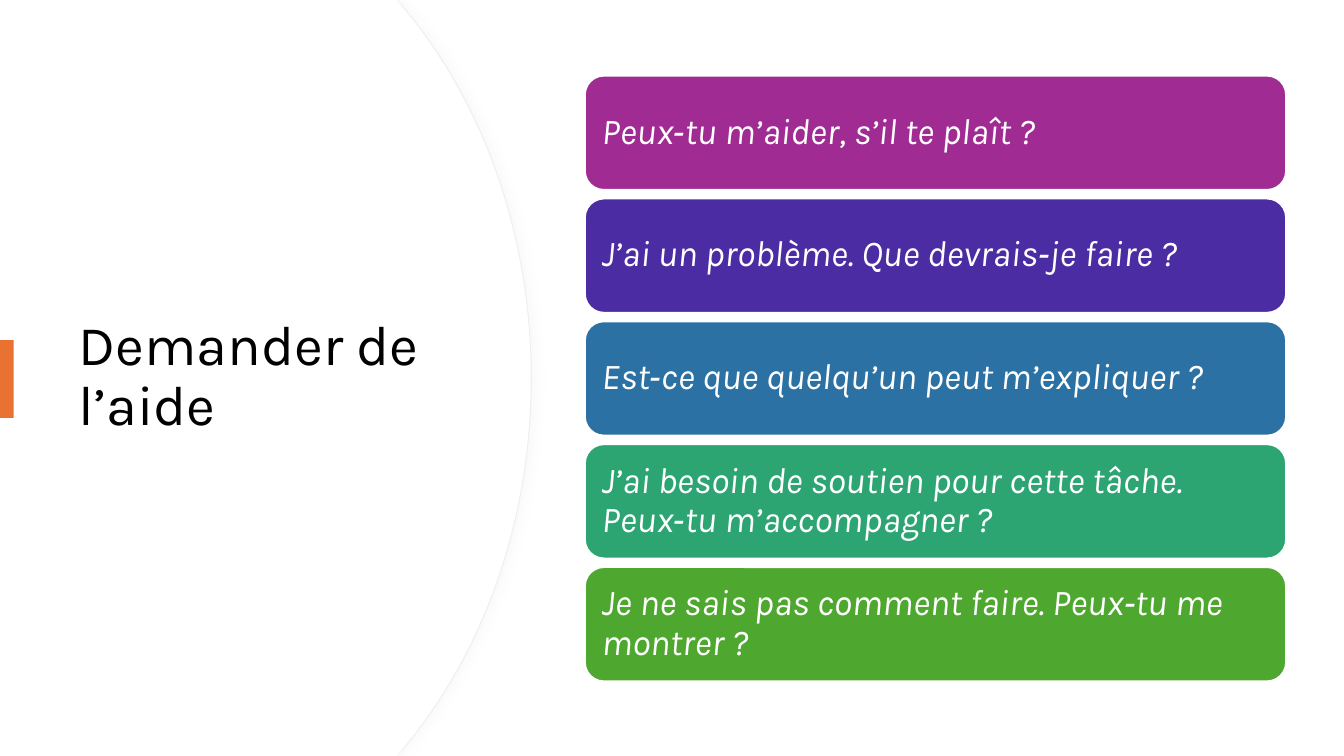
from lxml.etree import SubElement
from pptx import Presentation
from pptx.dml.color import RGBColor
from pptx.enum.shapes import MSO_SHAPE
from pptx.enum.text import MSO_ANCHOR
from pptx.oxml.ns import qn
from pptx.util import Pt

PX = 9525  # EMU per px, slide of 1280 x 720 px
WIDE, HIGH = 1280, 720
FONT = "Karla"
COLORS = {
    "white": "FFFFFF", "black": "000000", "edge": "EFEFEF",
    "shade": "D9D9D9", "orange": "E97132", "purple": "A02B93",
    "indigo": "4B2CA2", "blue": "2C71A4", "teal": "2DA573",
    "green": "4EA72E",
}
CARDS = [
    ("purple", "Peux‑tu m’aider, s’il te plaît ?"),
    ("indigo", "J’ai un problème. Que devrais‑je faire ?"),
    ("blue", "Est‑ce que quelqu’un peut m’expliquer ?"),
    ("teal", "J’ai besoin de soutien pour cette tâche. Peux‑tu m’accompagner ?"),
    ("green", "Je ne sais pas comment faire. Peux‑tu me montrer ?"),
]


def color(name):
    return RGBColor.from_string(COLORS[name])


def scale(box):
    return [n * PX for n in box]


def paint(shape, fill, line=None, width=0):
    shape.shadow.inherit = False
    shape.fill.solid()
    shape.fill.fore_color.rgb = color(fill)
    if line:
        shape.line.color.rgb = color(line)
        shape.line.width = Pt(width)
    else:
        shape.line.fill.background()


def write(slide, text, box, size, ink, inset, italic=False):
    frame = slide.shapes.add_textbox(*scale(box)).text_frame
    frame.word_wrap = True
    frame.vertical_anchor = MSO_ANCHOR.MIDDLE
    frame.margin_left = frame.margin_right = inset * PX
    frame.margin_top = frame.margin_bottom = inset * PX
    para = frame.paragraphs[0]
    para.line_spacing = 0.9
    run = para.add_run()
    run.text = text
    font = run.font
    font.name, font.size, font.italic = FONT, Pt(size), italic
    font.color.rgb = color(ink)


def block(slide, kind, box, **style):
    paint(slide.shapes.add_shape(kind, *scale(box)), **style)


def bend(lines):
    """Turn three line steps into one Bezier step."""
    first = lines[0]
    arc = first.makeelement(qn("a:cubicBezTo"))
    first.addprevious(arc)
    for line in lines:
        arc.append(line[0])
        line.getparent().remove(line)


def panel(slide, shift=0, **style):
    # The lower half mirrors the upper one
    upper = [(378, 0), (385 - shift, 8), (460 - shift, 98), (506 - shift, 223)]
    lower = [(x, HIGH - y) for x, y in reversed(upper)]
    points = upper + [(506 - shift, HIGH // 2)] + lower + [(0, HIGH)]
    pen = slide.shapes.build_freeform(0, 0, scale=PX)
    pen.add_line_segments(points, close=True)
    shape = pen.convert_to_shape()
    lines = list(shape.element.iter(qn("a:lnTo")))
    bend(lines[2:5])
    bend(lines[5:8])
    paint(shape, **style)
    return shape


def shade(shape, blur, dist, alpha):
    effects = shape.element.spPr.find(qn("a:effectLst"))
    outer = SubElement(effects, qn("a:outerShdw"), blurRad=str(Pt(blur)),
                       dist=str(Pt(dist)), dir="0", algn="l", rotWithShape="0")
    tint = SubElement(outer, qn("a:srgbClr"), val=COLORS["shade"])
    SubElement(tint, qn("a:alpha"), val=str(alpha * 1000))


def main():
    deck = Presentation()
    deck.slide_width, deck.slide_height = WIDE * PX, HIGH * PX
    slide = deck.slides.add_slide(deck.slide_layouts[6])

    # Curved panel with a soft edge
    back = panel(slide, fill="white", line="edge", width=0.75)
    shade(back, blur=7, dist=3, alpha=15)
    panel(slide, shift=1, fill="white")

    # Title and accent bar
    write(slide, "Demander de l’aide", (65, 122, 378, 475),
          size=40, ink="black", inset=10)
    block(slide, MSO_SHAPE.RECTANGLE, (0, 324, 13, 74), fill="orange")

    # Phrase cards
    for row, (fill, text) in enumerate(CARDS):
        top = 72 + row * 117
        block(slide, MSO_SHAPE.ROUNDED_RECTANGLE, (557, top, 668, 109),
              fill=fill, line="white", width=1.5)
        write(slide, text, (563, top + 5, 657, 98),
              size=26, ink="white", inset=10, italic=True)

    deck.save("out.pptx")


if __name__ == "__main__":
    main()
